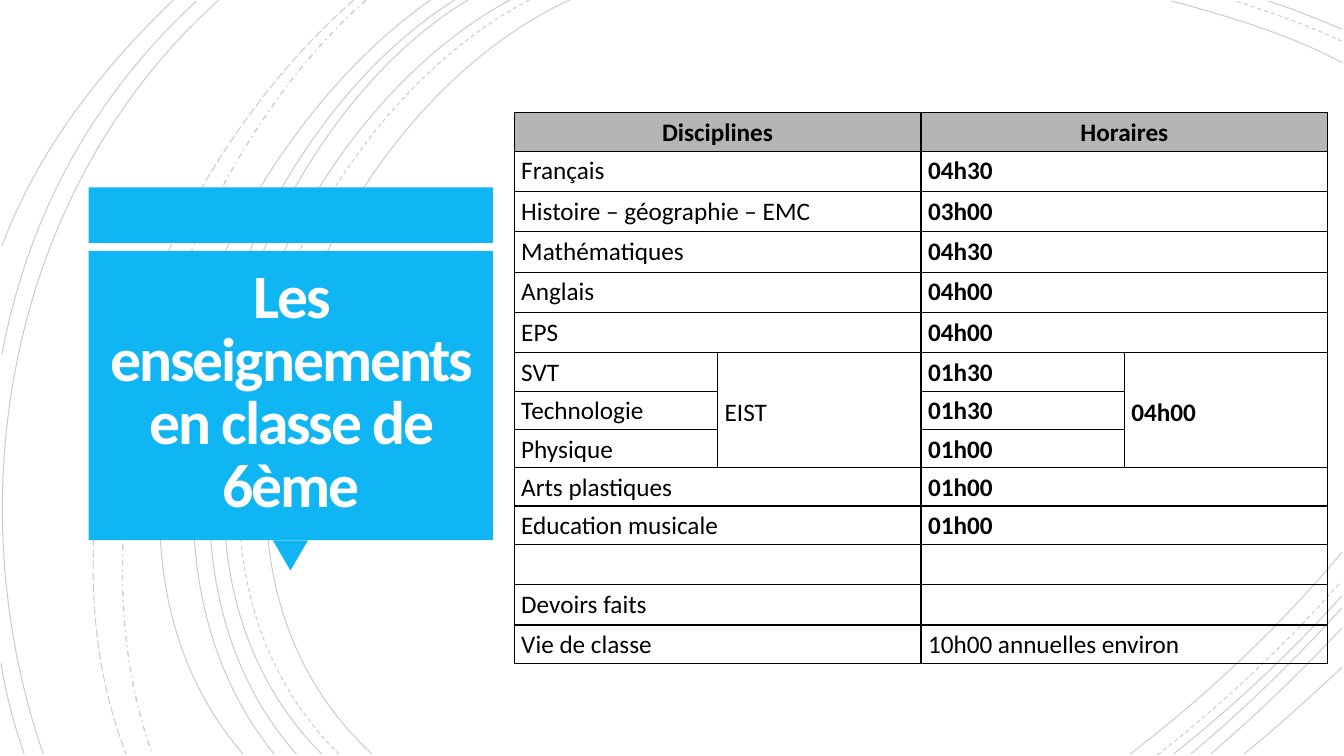
from lxml import etree
from pptx import Presentation
from pptx.dml.color import RGBColor
from pptx.enum.dml import MSO_LINE
from pptx.enum.shapes import MSO_SHAPE
from pptx.enum.text import MSO_ANCHOR, PP_ALIGN
from pptx.oxml import parse_xml
from pptx.oxml.ns import nsdecls, qn
from pptx.util import Inches, Pt

RECT, TRI = MSO_SHAPE.RECTANGLE, MSO_SHAPE.ISOSCELES_TRIANGLE
MID, TOP = MSO_ANCHOR.MIDDLE, MSO_ANCHOR.TOP
LEFT, CENTER = PP_ALIGN.LEFT, PP_ALIGN.CENTER
SOLID, DASH = MSO_LINE.SOLID, MSO_LINE.DASH
DOT, LONG = MSO_LINE.DASH_DOT, MSO_LINE.LONG_DASH
FONT, BLUE, GREY, BLACK = "Calibri", "10B6F4", "B5B5B5", "000000"

ARCS = [
    (SOLID, 0.75, 5.65, 0, 3.15, 1.15, 1.43, 5.4, 3.69, 7.48),
    (SOLID, 0.75, 13.31, 0.62, 12.78, 0.34, 12.18, 0.16, 11.62, 0.01),
    (SOLID, 0.75, 11.21, 7.48, 11.97, 6.9, 12.69, 6.22, 13.31, 5.48),
    (DASH, 0.75, 5.25, 0, 2.85, 1.25, 1.23, 5.37, 3.36, 7.48),
    (DASH, 0.75, 13.31, 0.41, 12.97, 0.25, 12.6, 0.12, 12.25, 0.01),
    (DASH, 0.75, 11.48, 7.49, 12.13, 6.98, 12.75, 6.4, 13.3, 5.77),
    (SOLID, 0.75, 5.06, 0, 2.7, 1.27, 1.1, 5.37, 3.19, 7.48),
    (SOLID, 0.75, 13.31, 0.29, 13.07, 0.19, 12.83, 0.09, 12.58, 0.01),
    (SOLID, 0.75, 11.64, 7.48, 12.23, 7.01, 12.8, 6.48, 13.31, 5.91),
    (SOLID, 0.75, 4.64, 0, 2.44, 1.33, 1.1, 5.41, 2.94, 7.48),
    (SOLID, 0.75, 11.81, 7.48, 12.34, 7.04, 12.84, 6.55, 13.31, 6.03),
    (SOLID, 0.75, 4.51, 0, 2.31, 1.38, 0.97, 5.33, 2.72, 7.48),
    (SOLID, 0.75, 12.01, 7.48, 12.46, 7.09, 12.9, 6.67, 13.31, 6.23),
    (SOLID, 0.75, 4.27, 0, 2.17, 1.47, 0.53, 5.29, 2.41, 7.48),
    (SOLID, 0.75, 12.34, 7.48, 12.67, 7.21, 12.99, 6.92, 13.31, 6.62),
    (DOT, 1, 3.63, 0, 1.76, 1.66, 0.65, 5.09, 1.51, 7.48),
    (LONG, 0.75, 3.51, 0, 1.57, 1.69, 0.29, 4.99, 1.25, 7.48),
    (SOLID, 0.75, 2.17, 0, 0.11, 1.85, -0.46, 4.9, 0.43, 7.48),
    (SOLID, 0.75, 1.95, 0.01, 0.92, 0.96, 0.28, 2.14, 0.02, 3.51),
    (SOLID, 0.75, 0.01, 6.58, 0.06, 6.89, 0.14, 7.19, 0.24, 7.48),
    (SOLID, 0.75, 1.72, 0, 1, 0.69, 0.37, 1.5, 0.02, 2.44),
]

ROWS = [
    (0.38, "Disciplines", "Horaires"),
    (0.4, "Français", "04h30"),
    (0.4, "Histoire – géographie – EMC", "03h00"),
    (0.4, "Mathématiques", "04h30"),
    (0.4, "Anglais", "04h00"),
    (0.4, "EPS", "04h00"),
    (0.38, "SVT", "01h30"),
    (0.38, "Technologie", "01h30"),
    (0.38, "Physique", "01h00"),
    (0.38, "Arts plastiques", "01h00"),
    (0.38, "Education musicale", "01h00"),
    (0.4, "", ""),
    (0.4, "Devoirs faits", ""),
    (0.38, "Vie de classe", "10h00 annuelles environ"),
]
FIRST, LAST = 6, 8
JOINT = ("EIST", "04h00")


def color(code):
    return RGBColor.from_string(code)


def assign(item, form):
    for key, value in form.items():
        setattr(item, key, value)


def write(para, text, form, code):
    run = para.add_run()
    run.text = text
    assign(run.font, {"name": FONT, **form})
    run.font.color.rgb = color(code)
    return run


def bend(arc):
    legs = list(arc._element.iter(qn("a:lnTo")))
    curve = etree.SubElement(legs[0].getparent(), qn("a:cubicBezTo"))
    for leg in legs:
        curve.append(leg[0])
        leg.getparent().remove(leg)


def draw_arcs(slide, left, top):
    for dash, width, *nums in ARCS:
        dots = [(Inches(left + x), Inches(top + y))
                for x, y in zip(nums[::2], nums[1::2])]
        pen = slide.shapes.build_freeform(*dots[0])
        pen.add_line_segments(dots[1:], close=False)
        arc = pen.convert_to_shape()
        bend(arc)
        arc.shadow.inherit = False
        arc.fill.background()
        arc.line.color.rgb = color(BLACK)
        assign(arc.line, {"width": Pt(width), "dash_style": dash})
        tint = arc.line._ln.find(".//" + qn("a:srgbClr"))
        etree.SubElement(tint, qn("a:alpha")).set("val", "20000")


def draw_title(slide, left, top, width, height):
    blocks = [
        (RECT, 0, 0, width, 0.55, 0),
        (TRI, width / 2 - 0.18, height - 0.3, 0.35, 0.3, 180),
        (RECT, 0, 0.63, width, height - 0.93, 0),
    ]
    for kind, x, y, w, h, turn in blocks:
        block = slide.shapes.add_shape(
            kind, Inches(left + x), Inches(top + y), Inches(w), Inches(h))
        block.rotation = turn
        block.shadow.inherit = False
        block.fill.solid()
        block.fill.fore_color.rgb = color(BLUE)
        block.line.fill.background()
    box = slide.shapes.add_textbox(
        Inches(left + 0.09), Inches(top + 0.7),
        Inches(width - 0.18), Inches(height - 1.1))
    pad = Inches(0.1)
    assign(box.text_frame, {
        "word_wrap": True, "vertical_anchor": MID, "margin_left": pad,
        "margin_right": pad, "margin_top": pad, "margin_bottom": pad})
    para = box.text_frame.paragraphs[0]
    assign(para, {"alignment": CENTER, "line_spacing": 0.85})
    run = write(para, "Les enseignements en classe de 6ème",
                {"size": Pt(44), "bold": True}, "FFFEFF")
    run._r.get_or_add_rPr().set("spc", "-150")


def add_edges(cell):
    props = cell._tc.get_or_add_tcPr()
    for i, side in enumerate("LRTB"):
        props.insert(i, parse_xml(
            f'<a:ln{side} w="12700" {nsdecls("a")}><a:solidFill>'
            f'<a:srgbClr val="{BLACK}"/></a:solidFill></a:ln{side}>'))


def fill_cell(cell, text, bold, align, anchor):
    assign(cell, {
        "margin_left": Inches(0.07), "margin_right": Inches(0.07),
        "margin_top": 0, "margin_bottom": 0, "vertical_anchor": anchor})
    para = cell.text_frame.paragraphs[0]
    assign(para, {"alignment": align, "line_spacing": 1.15})
    if text:
        write(para, text, {"size": Pt(18), "bold": bold}, BLACK)


def draw_table(slide, left, top, width, height):
    table = slide.shapes.add_table(
        len(ROWS), 4, Inches(left), Inches(top),
        Inches(width), Inches(height)).table
    assign(table, {"first_row": False, "horz_banding": False})
    for col in table.columns:
        col.width = Inches(width / 4)
    for cell in table.iter_cells():
        cell.fill.background()
        add_edges(cell)
    for r, (tall, *texts) in enumerate(ROWS):
        table.rows[r].height = Inches(tall)
        head = r == 0
        for side, text in enumerate(texts):
            cell = table.cell(r, 2 * side)
            bold = head or (side == 1 and r < len(ROWS) - 1)
            fill_cell(cell, text, bold, CENTER if head else LEFT, TOP)
            if head:
                cell.fill.solid()
                cell.fill.fore_color.rgb = color(GREY)
            if not FIRST <= r <= LAST:
                cell.merge(table.cell(r, 2 * side + 1))
    for side, text in enumerate(JOINT):
        cell = table.cell(FIRST, 2 * side + 1)
        cell.merge(table.cell(LAST, 2 * side + 1))
        fill_cell(cell, text, side == 1, LEFT, MID)


def main():
    deck = Presentation()
    assign(deck, {"slide_width": Inches(13.33), "slide_height": Inches(7.5)})
    slide = deck.slides.add_slide(deck.slide_layouts[6])
    draw_arcs(slide, 0, 0)
    draw_title(slide, 0.88, 1.86, 4.01, 3.8)
    draw_table(slide, 5.1, 1.12, 8.07, 5.46)
    deck.save("out.pptx")


if __name__ == "__main__":
    main()
